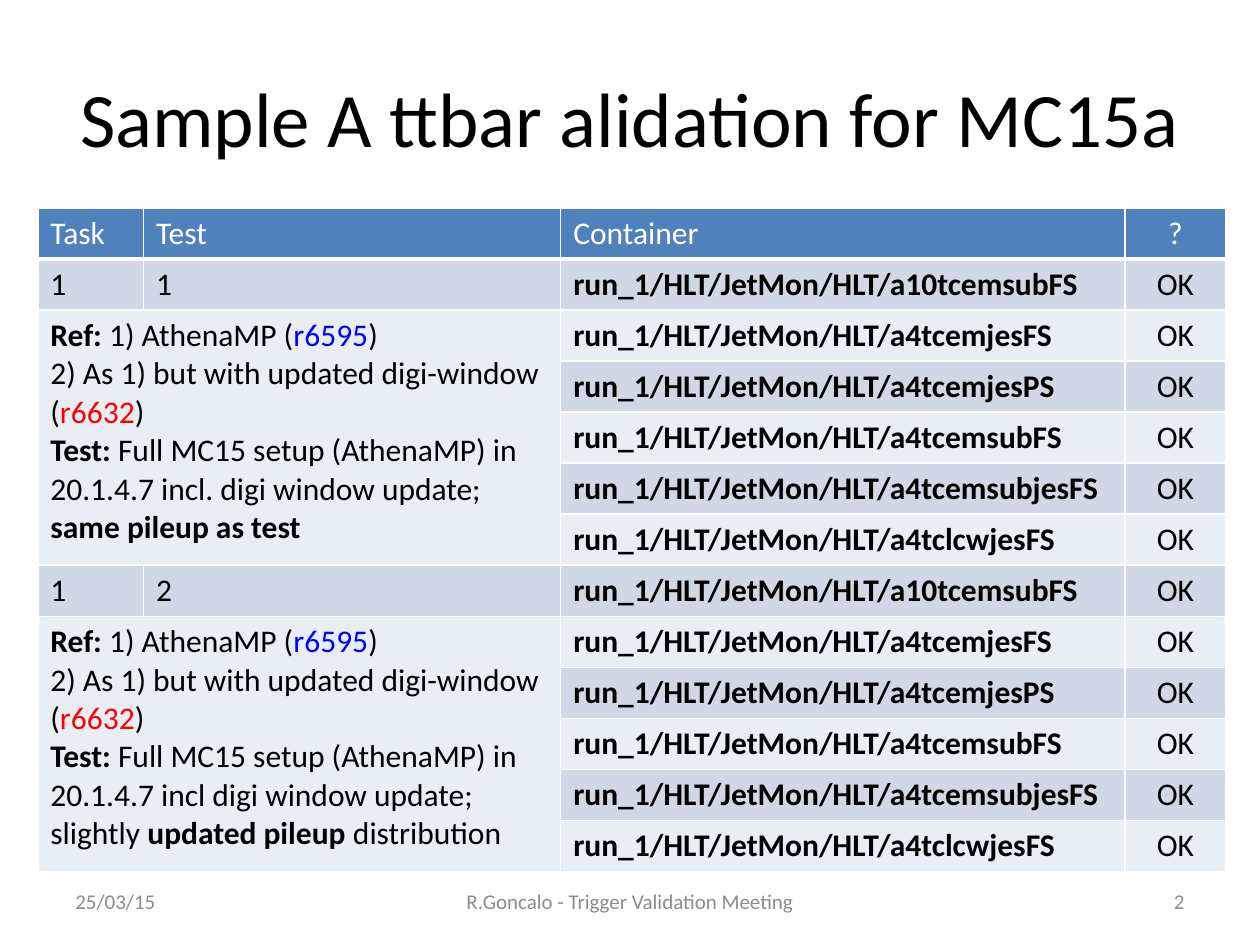
from lxml import etree
from pptx import Presentation
from pptx import util as u
from pptx.dml.color import RGBColor
from pptx.enum import text as t
from pptx.oxml.ns import qn

INK, WHITE, GREY = "000000", "FFFFFF", "8C8C8C"
HEAD, DARK, LIGHT = "4F81BD", "D0D8E8", "E9EDF4"
BLUE, RED = "0000FF", "FF0000"
LEFT, MID, RIGHT = t.PP_ALIGN.LEFT, t.PP_ALIGN.CENTER, t.PP_ALIGN.RIGHT

HEADS = ["Task", "Test", "Container", "?"]
WIDTHS = [0.84, 3.31, 4.48, 0.8]
CHAINS = ["a10tcemsubFS", "a4tcemjesFS", "a4tcemjesPS",
          "a4tcemsubFS", "a4tcemsubjesFS", "a4tclcwjesFS"]
# A run is (text, bold, colour).
REFS = [
    [("Ref: ", True, INK), ("1) AthenaMP (", False, INK),
     ("r6595", False, BLUE), (")", False, INK)],
    [("2) As 1) but with updated digi-window (", False, INK),
     ("r6632", False, RED), (")", False, INK)],
]
SETUP = "Full MC15 setup (AthenaMP) in 20.1.4.7 "
TESTS = [
    [("Test: ", True, INK),
     (SETUP + "incl. digi window update; ", False, INK),
     ("same pileup as test", True, INK)],
    [("Test: ", True, INK),
     (SETUP + "incl digi window update; slightly ", False, INK),
     ("updated pileup ", True, INK), ("distribution", False, INK)],
]


def paint(code):
    return RGBColor.from_string(code)


def write(frame, paras, size, align=LEFT):
    """Fill a text frame with paragraphs, each a list of runs."""
    for i, runs in enumerate(paras):
        para = frame.paragraphs[0] if i == 0 else frame.add_paragraph()
        para.alignment = align
        for words, bold, code in runs:
            run = para.add_run()
            run.text = words
            look = {"name": "Calibri", "size": u.Pt(size), "bold": bold}
            for key, val in look.items():
                setattr(run.font, key, val)
            run.font.color.rgb = paint(code)


def label(slide, box, words, size, code=INK, align=LEFT):
    frame = slide.shapes.add_textbox(*map(u.Inches, box)).text_frame
    frame.word_wrap = True
    frame.vertical_anchor = t.MSO_ANCHOR.MIDDLE
    write(frame, [[(words, False, code)]], size, align)


def edge(cell, base):
    """Draw white cell borders; base is the bottom width in points."""
    props = cell._tc.get_or_add_tcPr()
    widths = {"a:lnL": 1, "a:lnR": 1, "a:lnT": 1, "a:lnB": base}
    for i, (tag, width) in enumerate(widths.items()):
        line = etree.Element(qn(tag), w=str(u.Pt(width)))
        fill = etree.SubElement(line, qn("a:solidFill"))
        etree.SubElement(fill, qn("a:srgbClr"), val=WHITE)
        props.insert(i, line)


def fill_cell(cell, paras, align=LEFT):
    write(cell.text_frame, paras, 18, align)


def block(grid, top, test, notes):
    """Fill the rows of one test, starting at row top."""
    fill_cell(grid.cell(top, 0), [[("1", False, INK)]])
    fill_cell(grid.cell(top, 1), [[(str(test), False, INK)]])
    for row, chain in enumerate(CHAINS, top):
        name = "run_1/HLT/JetMon/HLT/" + chain
        fill_cell(grid.cell(row, 2), [[(name, True, INK)]])
        fill_cell(grid.cell(row, 3), [[("OK", False, INK)]], MID)
    note = grid.cell(top + 1, 0)
    note.merge(grid.cell(top + len(CHAINS) - 1, 1))
    fill_cell(note, REFS + [notes])


def results(slide, box):
    rows = 1 + len(CHAINS) * len(TESTS)
    grid = slide.shapes.add_table(
        rows, len(WIDTHS), *map(u.Inches, box)).table
    for col, width in zip(grid.columns, WIDTHS):
        col.width = u.Inches(width)
    for r, row in enumerate(grid.rows):
        row.height = u.Inches(box[3] / rows)
        # Bands alternate, and start afresh with each test.
        band = HEAD if r == 0 else DARK if r % 2 else LIGHT
        for c, cell in enumerate(row.cells):
            cell.fill.solid()
            cell.fill.fore_color.rgb = paint(band)
            edge(cell, 3 if r == 0 else 1)
            if r == 0:
                fill_cell(cell, [[(HEADS[c], False, WHITE)]],
                          MID if c == 3 else LEFT)
    for i, notes in enumerate(TESTS):
        block(grid, 1 + i * len(CHAINS), i + 1, notes)


def footer(slide, box):
    left, top, width, high = box
    side, mid = 2.33, 3.17
    parts = [(left, side, "25/03/15", LEFT),
             (left + (width - mid) / 2, mid,
              "R.Goncalo - Trigger Validation Meeting", MID),
             (left + width - side, side, "2", RIGHT)]
    for x, wide, words, align in parts:
        label(slide, (x, top, wide, high), words, 12, GREY, align)


def main():
    deck = Presentation()
    deck.slide_width, deck.slide_height = u.Inches(10), u.Inches(7.5)
    slide = deck.slides.add_slide(deck.slide_layouts[6])
    label(slide, (0.5, 0.3, 9, 1.25),
          "Sample A ttbar alidation for MC15a", 44, align=MID)
    results(slide, (0.3, 1.65, 9.43, 5.27))
    footer(slide, (0.5, 6.95, 9, 0.4))
    deck.save("out.pptx")


if __name__ == "__main__":
    main()
